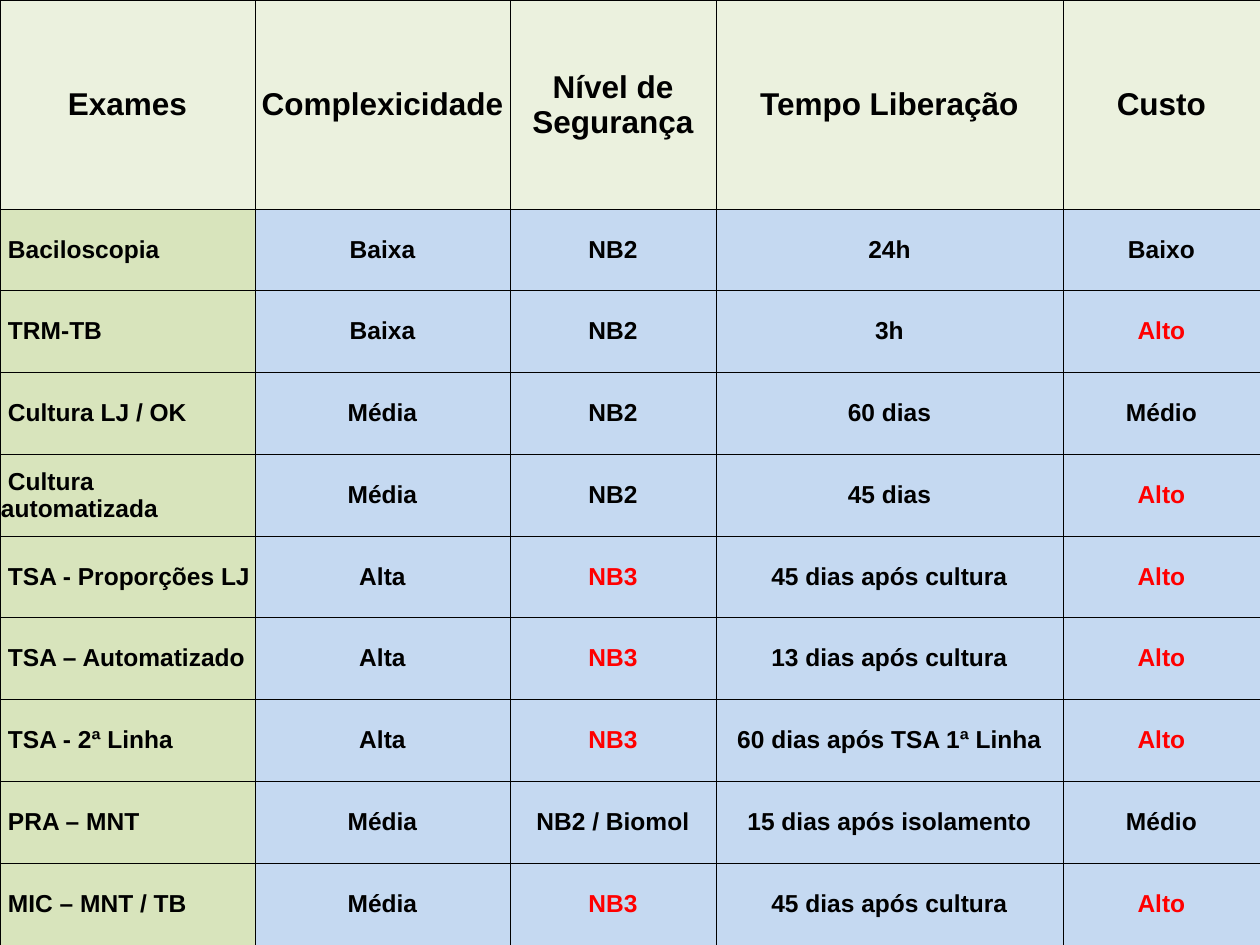
from dataclasses import dataclass
from lxml import etree
from pptx import Presentation
from pptx.dml.color import RGBColor
from pptx.enum.text import MSO_ANCHOR, PP_ALIGN
from pptx.oxml.ns import qn
from pptx.util import Pt

LEFT, CENTER = PP_ALIGN.LEFT, PP_ALIGN.CENTER
MIDDLE = MSO_ANCHOR.MIDDLE
WIDTH, HEIGHT = 1260, 945
BLANK = 6


@dataclass(frozen=True)
class Theme:
    font: str = "Arial"
    ink: str = "000000"
    alert: str = "FF0000"
    head: str = "EBF1DE"
    exam: str = "D8E4BC"
    data: str = "C5D9F1"
    head_size: int = 18
    body_size: int = 14
    line: float = 0.5


def px(count):
    return round(count * 914400 / 126)


def write(frame, text, *, font, size, color, align=CENTER, indent=0):
    """Put one bold paragraph into a text frame."""
    para = frame.paragraphs[0]
    para.alignment = align
    if indent:
        props = para._p.get_or_add_pPr()
        props.set("marL", "0")
        props.set("indent", str(px(indent)))
    run = para.add_run()
    run.text = text
    run.font.name = font
    run.font.size = Pt(size)
    run.font.bold = True
    run.font.color.rgb = RGBColor.from_string(color)


class Deck:
    def __init__(self, theme):
        self.theme = theme
        self.prs = Presentation()
        self.prs.slide_width = px(WIDTH)
        self.prs.slide_height = px(HEIGHT)
        self.slide = self.prs.slides.add_slide(self.prs.slide_layouts[BLANK])

    def border(self, cell):
        props = cell._tc.get_or_add_tcPr()
        for spot, side in enumerate(("lnL", "lnR", "lnT", "lnB")):
            line = etree.Element(qn(f"a:{side}"), w=str(Pt(self.theme.line)))
            fill = etree.SubElement(line, qn("a:solidFill"))
            etree.SubElement(fill, qn("a:srgbClr"), val=self.theme.ink)
            props.insert(spot, line)

    def cell(self, cell, text, fill, **style):
        cell.fill.solid()
        cell.fill.fore_color.rgb = RGBColor.from_string(fill)
        cell.vertical_anchor = MIDDLE
        cell.margin_left = cell.margin_right = cell.margin_top = px(1)
        cell.margin_bottom = 0
        self.border(cell)
        write(cell.text_frame, text, font=self.theme.font, **style)

    def table(self, rows, widths, heights, alerts):
        look = self.theme
        grid = self.slide.shapes.add_table(
            len(rows), len(widths), 0, 0, px(WIDTH), px(HEIGHT)).table
        for col, width in zip(grid.columns, widths):
            col.width = px(width)
        for row, height in zip(grid.rows, heights):
            row.height = px(height)
        for r, row in enumerate(rows):
            for c, text in enumerate(row):
                fill = look.data
                style = {"size": look.body_size, "color": look.ink}
                if r == 0:
                    fill = look.head
                    style["size"] = look.head_size
                elif c == 0:
                    fill = look.exam
                    style.update(align=LEFT, indent=7)
                elif text in alerts:
                    style["color"] = look.alert
                self.cell(grid.cell(r, c), text, fill, **style)


# Exam comparison
EXAMS = [
    ("Exames", "Complexicidade", "Nível de Segurança", "Tempo Liberação", "Custo"),
    ("Baciloscopia", "Baixa", "NB2", "24h", "Baixo"),
    ("TRM-TB", "Baixa", "NB2", "3h", "Alto"),
    ("Cultura LJ / OK", "Média", "NB2", "60 dias", "Médio"),
    ("Cultura automatizada", "Média", "NB2", "45 dias", "Alto"),
    ("TSA - Proporções LJ", "Alta", "NB3", "45 dias após cultura", "Alto"),
    ("TSA – Automatizado", "Alta", "NB3", "13 dias após cultura", "Alto"),
    ("TSA - 2ª Linha", "Alta", "NB3", "60 dias após TSA 1ª Linha", "Alto"),
    ("PRA – MNT", "Média", "NB2 / Biomol", "15 dias após isolamento", "Médio"),
    ("MIC – MNT / TB", "Média", "NB3", "45 dias após cultura", "Alto"),
]
WIDTHS = (255, 255, 206, 347, 197)
HEAD = 209
ALERTS = {"NB3", "Alto"}


def main():
    # Body rows share the height below the header
    count = len(EXAMS) - 1
    edges = [(HEIGHT - HEAD) * i // count for i in range(count + 1)]
    heights = [HEAD] + [low - top for top, low in zip(edges, edges[1:])]

    deck = Deck(Theme())
    deck.table(EXAMS, WIDTHS, heights, ALERTS)
    deck.prs.save("out.pptx")


if __name__ == "__main__":
    main()
